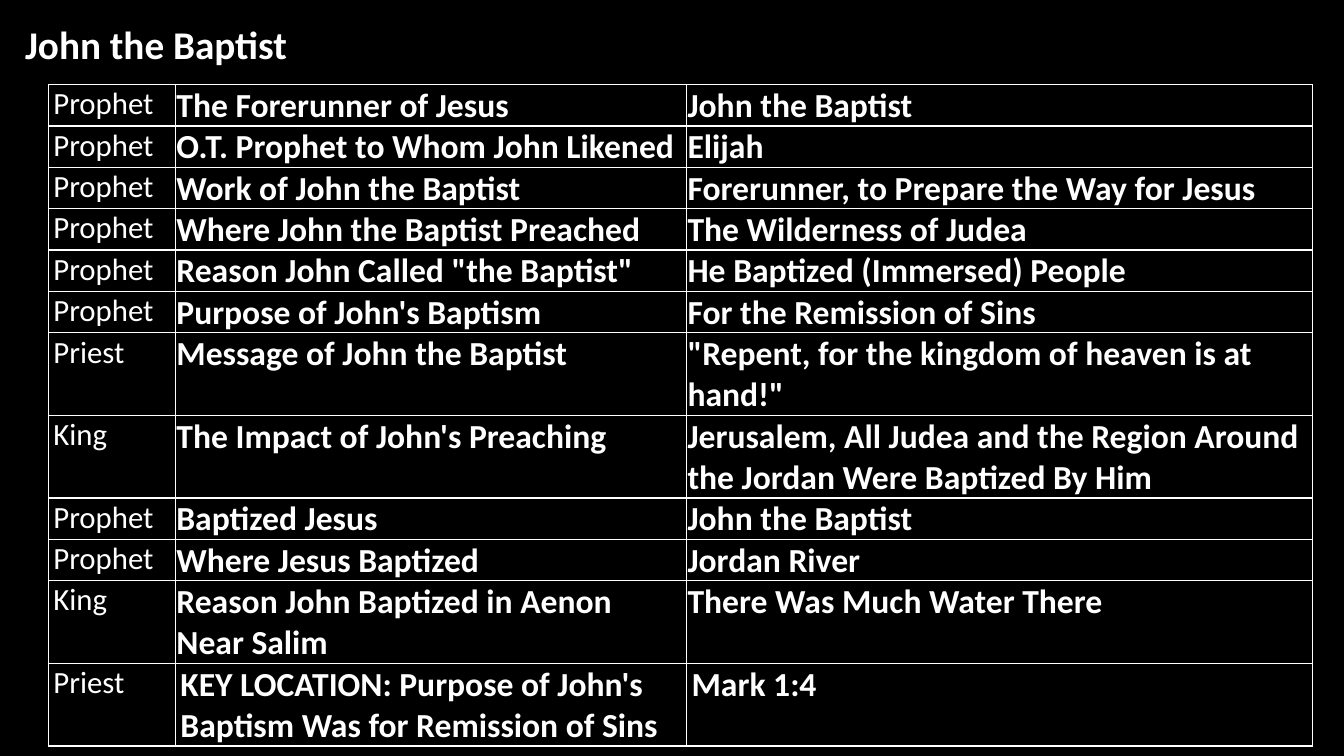
from lxml import etree
from pptx import Presentation, util as u
from pptx.dml.color import RGBColor
from pptx.enum import text
from pptx.oxml.ns import qn

TITLE = "John the Baptist"
# office, topic, answer, lines of text in the row
ROWS = [
    ("Prophet", "The Forerunner of Jesus", "John the Baptist", 1),
    ("Prophet", "O.T. Prophet to Whom John Likened", "Elijah", 1),
    ("Prophet", "Work of John the Baptist", "Forerunner, to Prepare the Way for Jesus", 1),
    ("Prophet", "Where John the Baptist Preached", "The Wilderness of Judea", 1),
    ("Prophet", 'Reason John Called "the Baptist"', "He Baptized (Immersed) People", 1),
    ("Prophet", "Purpose of John's Baptism", "For the Remission of Sins", 1),
    ("Priest", "Message of John the Baptist",
     '"Repent, for the kingdom of heaven is at hand!"', 2),
    ("King", "The Impact of John's Preaching",
     "Jerusalem, All Judea and the Region Around the Jordan Were Baptized By Him", 2),
    ("Prophet", "Baptized Jesus", "John the Baptist", 1),
    ("Prophet", "Where Jesus Baptized", "Jordan River", 1),
    ("King", "Reason John Baptized in Aenon Near Salim", "There Was Much Water There", 2),
    ("Priest", "KEY LOCATION: Purpose of John's Baptism Was for Remission of Sins",
     "Mark 1:4", 2),
]
COLS = (1.26, 5.07, 6.21)
LINE_H = 0.41
FONT = "Calibri"
BLACK = RGBColor(0x00, 0x00, 0x00)
WHITE = RGBColor(0xFF, 0xFF, 0xFF)


def write(tf, words, size, bold):
    p = tf.paragraphs[0]
    p.text = words
    f = p.font
    f.name, f.size, f.bold = FONT, u.Pt(size), bold
    f.color.rgb = WHITE


def add_borders(cell):
    tcPr = cell._tc.get_or_add_tcPr()
    for side in ("lnL", "lnR", "lnT", "lnB"):
        ln = etree.SubElement(tcPr, qn("a:" + side), w=str(u.Pt(1)))
        fill = etree.SubElement(ln, qn("a:solidFill"))
        etree.SubElement(fill, qn("a:srgbClr"), val=str(WHITE))


prs = Presentation()
prs.slide_width, prs.slide_height = u.Inches(13.33), u.Inches(7.5)
s = prs.slides.add_slide(prs.slide_layouts[6])
s.background.fill.solid()
s.background.fill.fore_color.rgb = BLACK

# Title
sp = s.shapes.add_textbox(*map(u.Inches, (0.15, 0.15, 11.66, 0.57)))
tf = sp.text_frame
tf.word_wrap = True
tf.auto_size = text.MSO_AUTO_SIZE.SHAPE_TO_FIT_TEXT
write(tf, TITLE, 28, True)

# Table of offices, topics and answers
height = LINE_H * sum(row[-1] for row in ROWS)
tbl = s.shapes.add_table(len(ROWS), len(COLS),
                         *map(u.Inches, (0.48, 0.84, sum(COLS), height))).table
tbl.first_row = tbl.horz_banding = False
for col, width in zip(tbl.columns, COLS):
    col.width = u.Inches(width)
for i, (*cells, lines) in enumerate(ROWS):
    tbl.rows[i].height = u.Inches(LINE_H * lines)
    for j, words in enumerate(cells):
        cell = tbl.cell(i, j)
        indented = j == 0 or i == len(ROWS) - 1
        cell.margin_left = u.Inches(0.05 if indented else 0.01)
        cell.margin_right = cell.margin_top = u.Inches(0.01)
        cell.margin_bottom = 0
        add_borders(cell)
        cell.fill.background()
        write(cell.text_frame, words, 24 if j else 22, j > 0)

prs.save("out.pptx")
